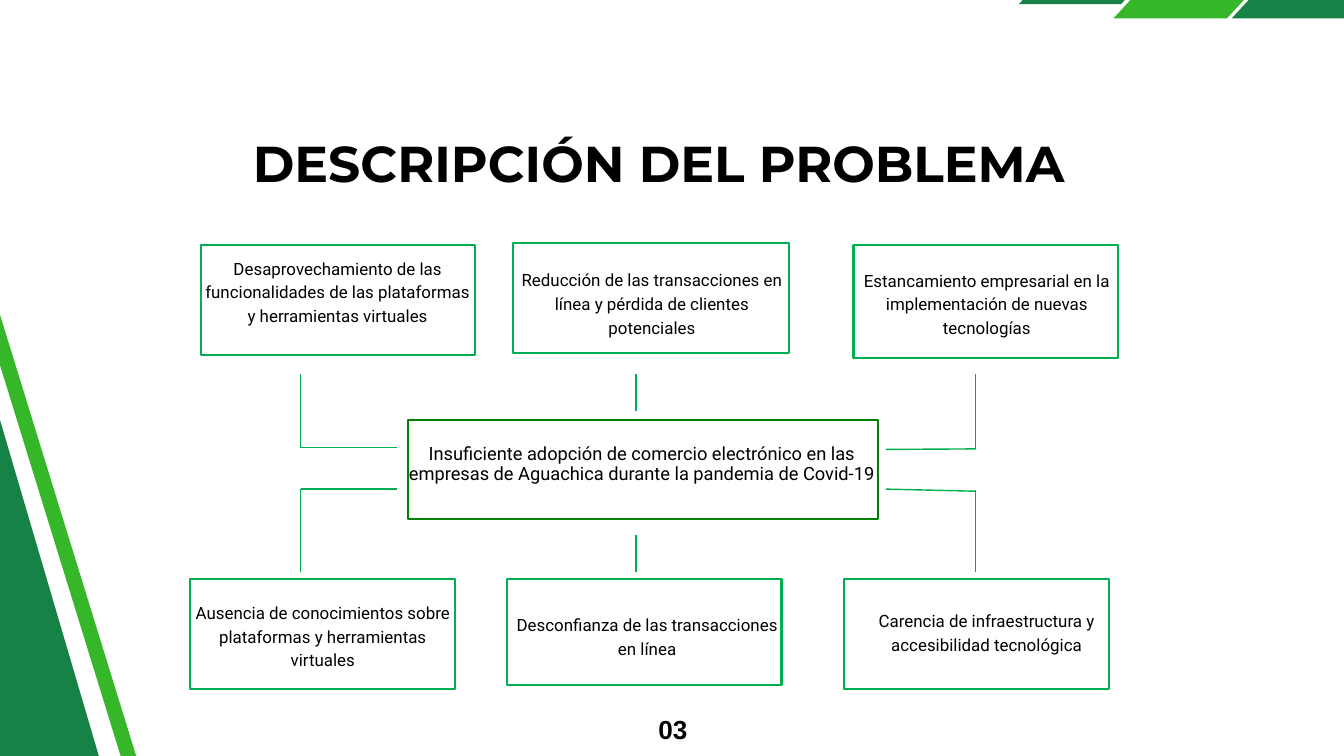
from lxml import etree
from pptx import Presentation
from pptx.dml.color import RGBColor
from pptx.enum import shapes, text
from pptx.oxml import ns
from pptx.util import Cm, Pt

DARK = RGBColor(0x16, 0x82, 0x46)
LIGHT = RGBColor(0x35, 0xB7, 0x29)
GREEN = RGBColor(0x00, 0xB0, 0x50)
CORE = RGBColor(0x00, 0x80, 0x00)
BLACK = RGBColor(0x00, 0x00, 0x00)

# Each card: left, top, width, height, text offset x, text offset y, wording
CARDS = [
    (7.59, 9.25, 10.36, 4.17, 0.16, 0.38,
     "Desaprovechamiento de las funcionalidades de las plataformas y herramientas virtuales"),
    (19.38, 9.19, 10.44, 4.17, 0.25, 0.89,
     "Reducción de las transacciones en línea y pérdida de clientes potenciales"),
    (32.26, 9.25, 10.01, 4.29, 0.03, 0.84,
     "Estancamiento empresarial en la implementación de nuevas tecnologías"),
    (7.19, 21.89, 10.01, 4.17, 0, 0.76,
     "Ausencia de conocimientos sobre plataformas y herramientas virtuales"),
    (19.15, 21.89, 10.39, 4, 0.3, 1.22,
     "Desconfianza de las transacciones en línea"),
    (31.9, 21.89, 10.01, 4.17, 0.38, 1.07,
     "Carencia de infraestructura y accesibilidad tecnológica"),
]
CARD_TEXT_WIDTH = 10.02
CORE_TEXT = ("Insuficiente adopción de comercio electrónico en las empresas "
             "de Aguachica durante la pandemia de Covid-19")


def add_text(s, box, content, font, size, spacing=None, bold=False,
             align=text.PP_ALIGN.CENTER):
    """Place one paragraph of black text without margins."""
    tf = s.shapes.add_textbox(*map(Cm, box)).text_frame
    tf.word_wrap = True
    tf.margin_left = tf.margin_right = tf.margin_top = tf.margin_bottom = 0
    p = tf.paragraphs[0]
    p.text = content
    p.alignment = align
    if spacing:
        p.line_spacing = Pt(spacing)
    f = p.runs[0].font
    f.name, f.size, f.bold = font, Pt(size), bold
    f.color.rgb = BLACK


def add_frame(s, box, color):
    """Draw an unfilled outlined rectangle."""
    sp = s.shapes.add_shape(shapes.MSO_SHAPE.RECTANGLE, *map(Cm, box))
    sp.shadow.inherit = False
    sp.fill.background()
    sp.line.color.rgb = color
    sp.line.width = Pt(2.25)


def add_polygon(s, points, color):
    """Draw a filled outline through the given points."""
    pts = [(Cm(x), Cm(y)) for x, y in points]
    fb = s.shapes.build_freeform(*pts[0])
    fb.add_line_segments(pts[1:], close=True)
    sp = fb.convert_to_shape()
    sp.shadow.inherit = False
    sp.fill.solid()
    sp.fill.fore_color.rgb = color
    sp.line.fill.background()


def add_line(s, x1, y1, x2, y2):
    """Draw a thin green line."""
    cn = s.shapes.add_connector(shapes.MSO_CONNECTOR.STRAIGHT,
                                Cm(x1), Cm(y1), Cm(x2), Cm(y2))
    cn.line.color.rgb = GREEN
    cn.line.width = Pt(1.5)
    etree.SubElement(cn._element.spPr, ns.qn("a:effectLst"))


def add_corner(s, left, top):
    """Place the three slanted stripes, starting from the given corner."""
    stripes = [(0, 0.51, 3.86, 2.34, 2.15, DARK),
               (3.58, 0, 4.29, 3.38, 3.12, LIGHT),
               (8.05, 0, 4.29, 3.38, 3.12, DARK)]
    for dx, dy, width, height, slant, color in stripes:
        x, y = left + dx, top + dy
        add_polygon(s, [(x + slant, y), (x + slant + width, y),
                        (x + width, y + height), (x, y + height)], color)


def add_side(s, left, bottom):
    """Place the two long diagonals rising from the lower left corner."""
    bands = [([(-5, 15.42), (-16.76, -24.59), (-4.55, -28.17), (7.21, 11.81)], DARK),
             ([(8.74, 13.54), (-3.56, -26.31), (-3.02, -26.47), (9.27, 13.36)], LIGHT)]
    for points, color in bands:
        add_polygon(s, [(left + x, bottom + y) for x, y in points], color)


def add_card(s, left, top, width, height, dx, dy, content):
    """Place a cause or effect with its frame."""
    add_frame(s, (left, top, width, height), GREEN)
    add_text(s, (left + dx, top + dy, CARD_TEXT_WIDTH, 2.6), content,
             "Roboto", 18.1, 25.4)


def add_core(s, left, top, width, height):
    """Place the central problem and the lines that reach out of it."""
    add_frame(s, (left, top, width, height), CORE)
    add_text(s, (left, top + 0.94, width - 0.1, 2.21), CORE_TEXT,
             "Roboto", 19.6, 20.8)
    right = left + width
    up, down = top - 1.76, top + height + 2.03
    middle = left + 8.62
    west, east = left - 4.06, right + 3.68
    upper, lower = top + 1.04, top + 2.61
    for x1, y1, x2, y2 in [
        (middle, up + 1.4, middle, up),
        (middle, down, middle, down - 1.4),
        (west, upper, left - 0.41, upper),
        (west, upper, west, up),
        (west, lower, left - 0.41, lower),
        (west, down, west, lower),
        (right + 0.28, upper + 0.07, east, upper + 0.05),
        (east, upper + 0.07, east, up),
        (right + 0.28, lower, east, lower + 0.08),
        (east, down, east, lower + 0.05),
    ]:
        add_line(s, x1, y1, x2, y2)


def main():
    """Build the problem description slide."""
    prs = Presentation()
    prs.slide_width, prs.slide_height = Cm(50.8), Cm(28.58)
    s = prs.slides.add_slide(prs.slide_layouts[6])
    add_corner(s, 38.51, -2.69)
    add_side(s, 0, 28.58)
    add_text(s, (7.42, 4.98, 34.95, 2.31), "DESCRIPCIÓN DEL PROBLEMA",
             "Montserrat", 54, bold=True)
    add_core(s, 15.42, 15.88, 17.78, 3.73)
    for card in CARDS:
        add_card(s, *card)
    add_text(s, (24.56, 26.77, 1.42, 1.27), "03", "Arial", 28, 39.2,
             bold=True, align=text.PP_ALIGN.RIGHT)
    prs.save("out.pptx")


if __name__ == "__main__":
    main()
